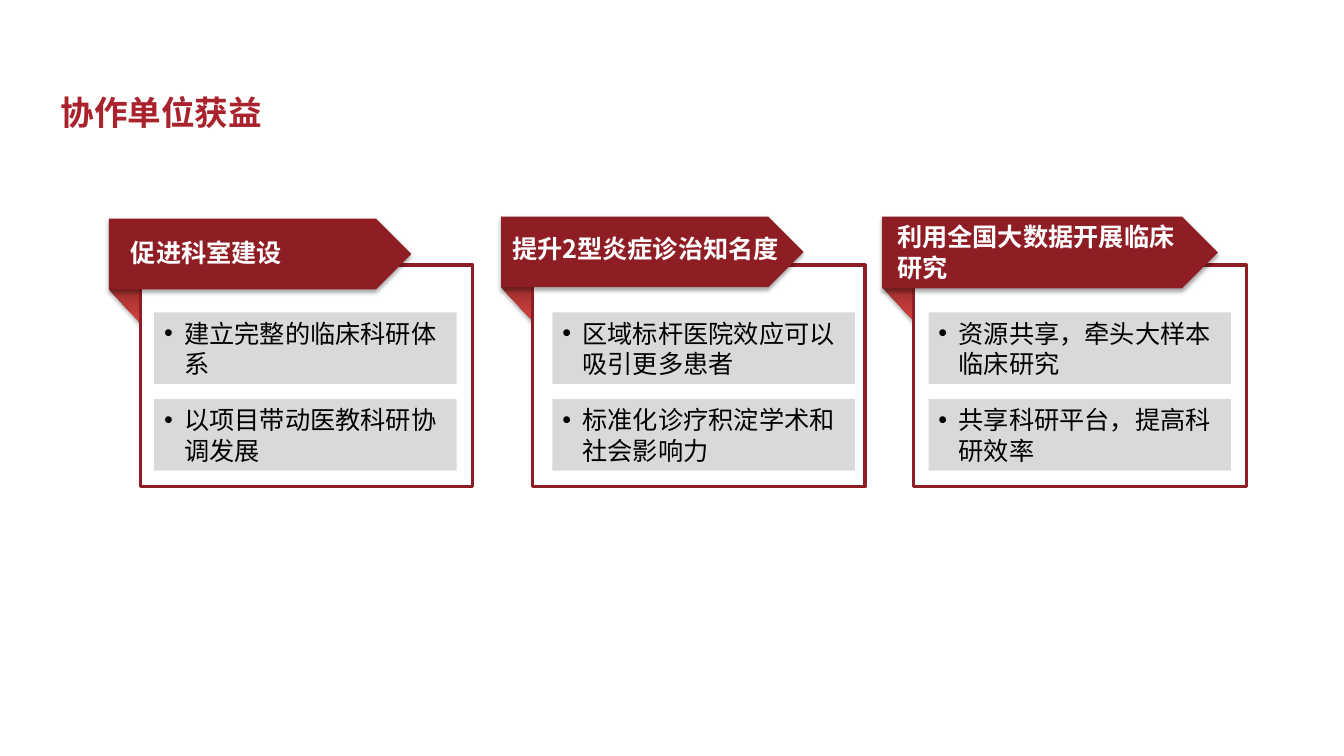
from dataclasses import dataclass

from lxml.etree import SubElement
from pptx import Presentation
from pptx.dml.color import RGBColor
from pptx.enum.shapes import MSO_SHAPE
from pptx.enum.text import MSO_ANCHOR, MSO_AUTO_SIZE, PP_ALIGN
from pptx.oxml import parse_xml
from pptx.oxml.ns import nsdecls, qn
from pptx.util import Inches, Pt

TITLE_RED = RGBColor(0xA9, 0x22, 0x2C)
DARK_RED = RGBColor(0x8F, 0x1D, 0x24)
GREY = RGBColor(0xD9, 0xD9, 0xD9)
WHITE = RGBColor(0xFF, 0xFF, 0xFF)
BLACK = RGBColor(0, 0, 0)
FOLD_STOPS = [
    (0, RGBColor(0x9C, 0x2F, 0x2D)),
    (80, RGBColor(0xCB, 0x3E, 0x3A)),
    (100, RGBColor(0xCE, 0x3B, 0x37)),
]

FRAME_TOP, FRAME_WIDTH, FRAME_HEIGHT = 2.63, 3.3, 2.2
FRAME_INDENT = 0.31
FOLD_DROP, FOLD_WIDTH, FOLD_HEIGHT = 0.7, 0.64, 0.34
POINT_TOP, POINT_STEP, POINT_WIDTH, POINT_HEIGHT = 3.1, 0.86, 3, 0.71


@dataclass
class Benefit:
    heading: str
    points: list
    flag: tuple
    heading_box: tuple
    points_left: float


BENEFITS = [
    Benefit("促进科室建设",
            ["建立完整的临床科研体系", "以项目带动医教科研协调发展"],
            (1.08, 2.17, 3, 0.7), (1.2, 2.31, 1.86, 0.4), 1.53),
    Benefit("提升2型炎症诊治知名度",
            ["区域标杆医院效应可以吸引更多患者", "标准化诊疗积淀学术和社会影响力"],
            (4.97, 2.15, 3, 0.7), (4.98, 2.27, 3.39, 0.4), 5.48),
    Benefit("利用全国大数据开展临床研究",
            ["资源共享，牵头大样本临床研究", "共享科研平台，提高科研效率"],
            (8.75, 2.15, 3.33, 0.71), (8.8, 2.15, 3, 0.7), 9.21),
]


class SlideBuilder:
    font_name = "Noto Sans CJK SC"

    def __init__(self, slide):
        self.slide = slide

    def block(self, kind, box, fill=None, line=None):
        shape = self.slide.shapes.add_shape(kind, *map(Inches, box))
        shape.shadow.inherit = False
        if fill is not None:
            shape.fill.solid()
            shape.fill.fore_color.rgb = fill
        if line is None:
            shape.line.fill.background()
        else:
            shape.line.color.rgb = line
            shape.line.width = Pt(2.25)
        return shape

    def drop_shadow(self, shape):
        effects = shape._element.spPr.find(qn("a:effectLst"))
        effects.append(parse_xml(
            f'<a:outerShdw {nsdecls("a")} blurRad="{Pt(3.1)}" dist="{Pt(1.8)}" '
            'dir="5400000" rotWithShape="0"><a:srgbClr val="000000">'
            '<a:alpha val="35000"/></a:srgbClr></a:outerShdw>'))

    def flag(self, box):
        self.drop_shadow(self.block(MSO_SHAPE.PENTAGON, box, DARK_RED))

    def fold(self, box):
        """Draw the shaded corner that the flag wraps round."""
        shape = self.block(MSO_SHAPE.ISOSCELES_TRIANGLE, box)
        properties = shape._element.spPr
        properties.find(qn("a:xfrm")).set("flipV", "1")
        shape.fill.gradient()
        stops = "".join(
            f'<a:gs pos="{position * 1000}"><a:srgbClr val="{color}"/></a:gs>'
            for position, color in FOLD_STOPS)
        properties.replace(properties.find(qn("a:gradFill")), parse_xml(
            f'<a:gradFill {nsdecls("a")} rotWithShape="1"><a:gsLst>{stops}</a:gsLst>'
            '<a:lin ang="16200000" scaled="0"/></a:gradFill>'))
        self.drop_shadow(shape)

    def frame(self, box):
        self.block(MSO_SHAPE.RECTANGLE, box, WHITE, DARK_RED)

    def add_text(self, text_frame, text, size, color, bold=False):
        text_frame.word_wrap = True
        text_frame.auto_size = MSO_AUTO_SIZE.SHAPE_TO_FIT_TEXT
        paragraph = text_frame.paragraphs[0]
        paragraph.alignment = PP_ALIGN.LEFT
        run = paragraph.add_run()
        run.text = text
        run.font.name = self.font_name
        run.font.size = Pt(size)
        run.font.bold = bold
        run.font.color.rgb = color
        SubElement(run.font._element, qn("a:ea")).set("typeface", self.font_name)

    def label(self, box, text, size, color, inset=True):
        text_frame = self.slide.shapes.add_textbox(*map(Inches, box)).text_frame
        if not inset:
            text_frame.margin_left = text_frame.margin_right = 0
            text_frame.margin_top = text_frame.margin_bottom = 0
        self.add_text(text_frame, text, size, color, bold=True)

    def point(self, box, text):
        text_frame = self.block(MSO_SHAPE.RECTANGLE, box, GREY).text_frame
        text_frame.vertical_anchor = MSO_ANCHOR.MIDDLE
        properties = text_frame.paragraphs[0]._p.get_or_add_pPr()
        properties.set("lvl", "1")
        properties.set("marL", str(Inches(0.2)))
        properties.set("indent", str(Inches(-0.2)))
        bullet_color = SubElement(properties, qn("a:buClr"))
        SubElement(bullet_color, qn("a:srgbClr")).set("val", str(BLACK))
        SubElement(properties, qn("a:buFont")).set("typeface", "Arial")
        SubElement(properties, qn("a:buChar")).set("char", "•")
        self.add_text(text_frame, text, 18, BLACK)

    def benefit(self, benefit):
        left, top = benefit.flag[:2]
        self.fold((left, top + FOLD_DROP, FOLD_WIDTH, FOLD_HEIGHT))
        self.frame((left + FRAME_INDENT, FRAME_TOP, FRAME_WIDTH, FRAME_HEIGHT))
        self.flag(benefit.flag)
        self.label(benefit.heading_box, benefit.heading, 18, WHITE)
        for row, text in enumerate(benefit.points):
            self.point((benefit.points_left, POINT_TOP + row * POINT_STEP,
                        POINT_WIDTH, POINT_HEIGHT), text)


def main():
    presentation = Presentation()
    presentation.slide_width = Inches(13.33)
    presentation.slide_height = Inches(7.5)
    builder = SlideBuilder(presentation.slides.add_slide(presentation.slide_layouts[6]))
    builder.label((0.6, 0.91, 7.81, 0.4), "协作单位获益", 24, TITLE_RED, inset=False)
    for benefit in BENEFITS:
        builder.benefit(benefit)
    presentation.save("out.pptx")


if __name__ == "__main__":
    main()
